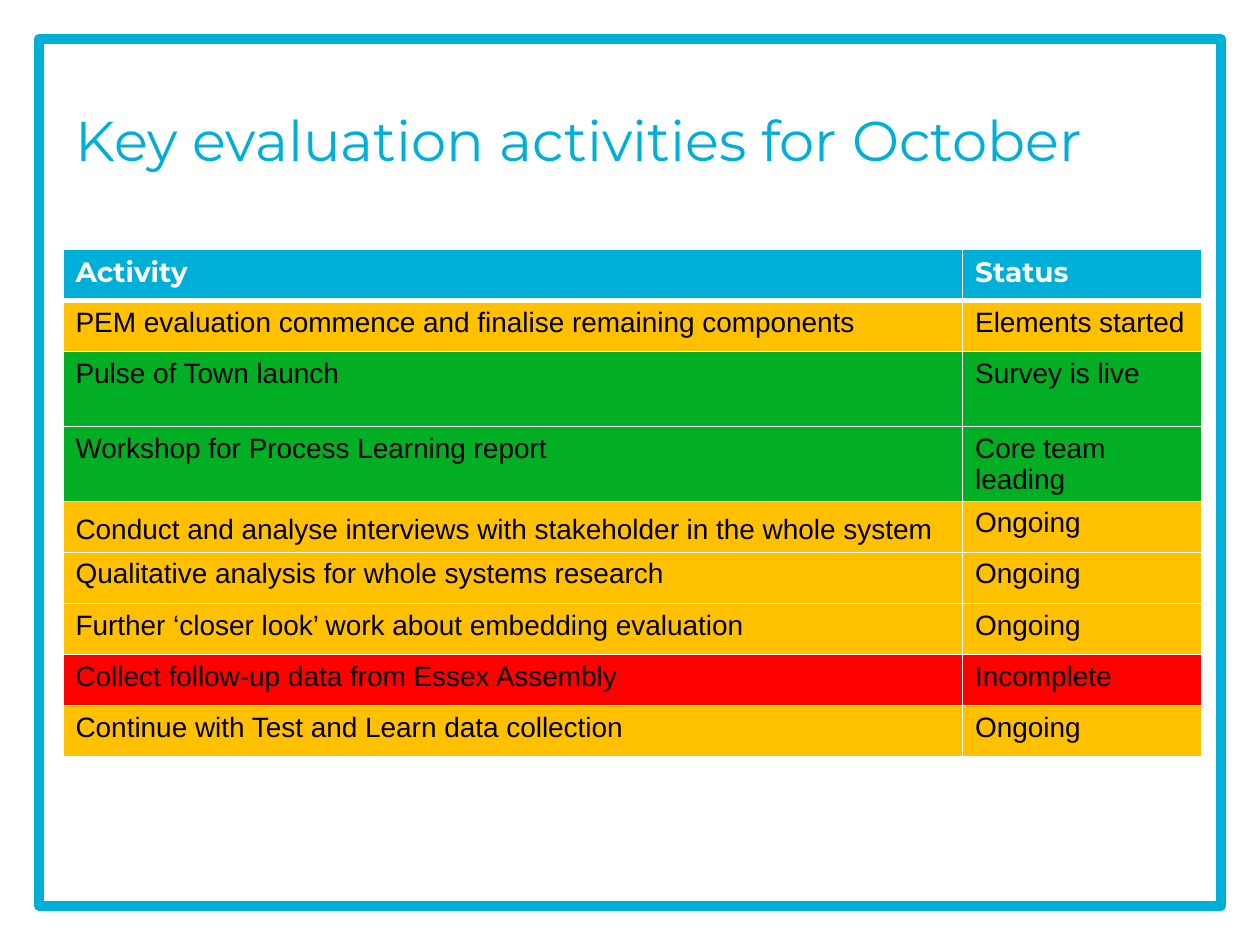
import pptx
import pptx.util
import pptx.dml.color
import pptx.enum.shapes
import pptx.enum.text
from lxml import etree
from pptx.oxml.ns import qn

Inch, Pt = pptx.util.Inches, pptx.util.Pt

# Content
TITLE = "Key evaluation activities for October"
HEAD = ("Activity", "Status")
TASKS = [  # activity, status, rating, lines of height
    ("PEM evaluation commence and finalise remaining components", "Elements started", "amber", 1),
    ("Pulse of Town launch", "Survey is live", "green", 2),
    ("Workshop for Process Learning report", "Core team leading", "green", 2),
    ("Conduct and analyse interviews with stakeholder in the whole system", "Ongoing", "amber", 1),
    ("Qualitative analysis for whole systems research", "Ongoing", "amber", 1),
    ("Further ‘closer look’ work about embedding evaluation", "Ongoing", "amber", 1),
    ("Collect follow-up data from Essex Assembly", "Incomplete", "red", 1),
    ("Continue with Test and Learn data collection", "Ongoing", "amber", 1),
]
LOOSE = (4, 0)  # the cell with wider line spacing

# Theme and grid
THEME = {
    "brand": "00AFD8", "white": "FFFFFF", "black": "000000",
    "amber": "FFC000", "green": "02AE23", "red": "FF0000",
    "head": "Montserrat", "body": "Arial", "title": 32, "cell": 16,
}
WIDE, HIGH = 10, 7.5
EDGE = 0.31
COLS = (7.14, 1.9)
ROWS = {1: 29.2, 2: 42.8}  # points, by lines of height


def tint(name):
    return pptx.dml.color.RGBColor.from_string(THEME[name])


def write(frame, text, size="cell", face="body", color="black", bold=False,
          lead=None, after=None):
    frame.text = text
    para = frame.paragraphs[0]
    para.alignment = pptx.enum.text.PP_ALIGN.LEFT
    if lead:
        para.line_spacing = lead
    if after:
        para.space_after = Pt(after)
    font = para.runs[0].font
    font.size, font.name, font.bold = Pt(THEME[size]), THEME[face], bold
    font.color.rgb = tint(color)


def rule(cell, **widths):
    """Draw white borders; they must come before the cell's fill."""
    props = cell._tc.get_or_add_tcPr()
    for side in "LRTB":
        line = etree.SubElement(props, qn(f"a:ln{side}"), w=str(Pt(widths.get(side, 1))))
        fill = etree.SubElement(line, qn("a:solidFill"))
        etree.SubElement(fill, qn("a:srgbClr"), val=THEME["white"])


deck = pptx.Presentation()
deck.slide_width, deck.slide_height = Inch(WIDE), Inch(HIGH)
slide = deck.slides.add_slide(deck.slide_layouts[5])

# Frame, behind everything
frame = slide.shapes.add_shape(
    pptx.enum.shapes.MSO_SHAPE.RECTANGLE, Inch(EDGE), Inch(EDGE),
    Inch(WIDE - 2 * EDGE), Inch(HIGH - 2 * EDGE))
frame.shadow.inherit = False
frame.fill.background()
frame.line.color.rgb, frame.line.width = tint("brand"), Pt(5.67)
slide.shapes._spTree.insert(2, frame._element)

# Title
title = slide.shapes.title
title.left, title.top, title.width, title.height = map(Inch, (0.5, 0.48, 9, 1.25))
title.text_frame.vertical_anchor = pptx.enum.text.MSO_ANCHOR.MIDDLE
write(title.text_frame, TITLE, size="title", face="head", color="brand")

# Table
lines = [(*HEAD, "brand", 1)] + TASKS
tall = [Pt(ROWS[line[3]]) for line in lines]
table = slide.shapes.add_table(len(lines), len(COLS), Inch(0.5), Inch(1.98),
                               Inch(sum(COLS)), sum(tall)).table
table.horz_banding = False
for col, width in zip(table.columns, COLS):
    col.width = Inch(width)
for row, (*texts, shade, _) in enumerate(lines):
    table.rows[row].height = tall[row]
    for col, text in enumerate(texts):
        cell = table.cell(row, col)
        rule(cell, T=3 if row == 1 else 1, B=3 if row == 0 else 1)
        cell.fill.solid()
        cell.fill.fore_color.rgb = tint(shade)
        if row == 0:
            style = {"face": "head", "color": "white", "bold": True}
        elif (row, col) == LOOSE:
            style = {"lead": 1.2, "after": 6}
        else:
            style = {}
        write(cell.text_frame, text, **style)

deck.save("out.pptx")
